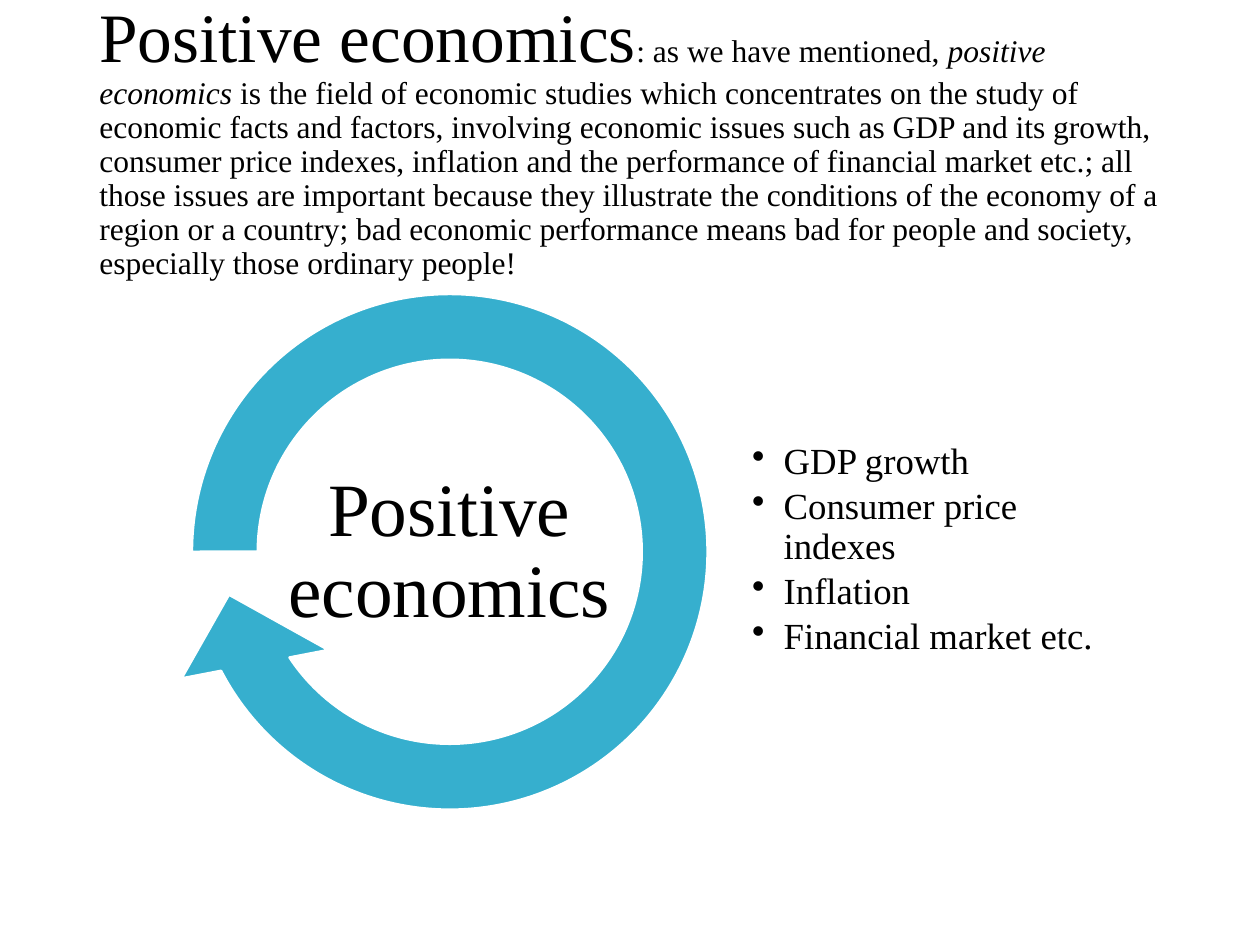
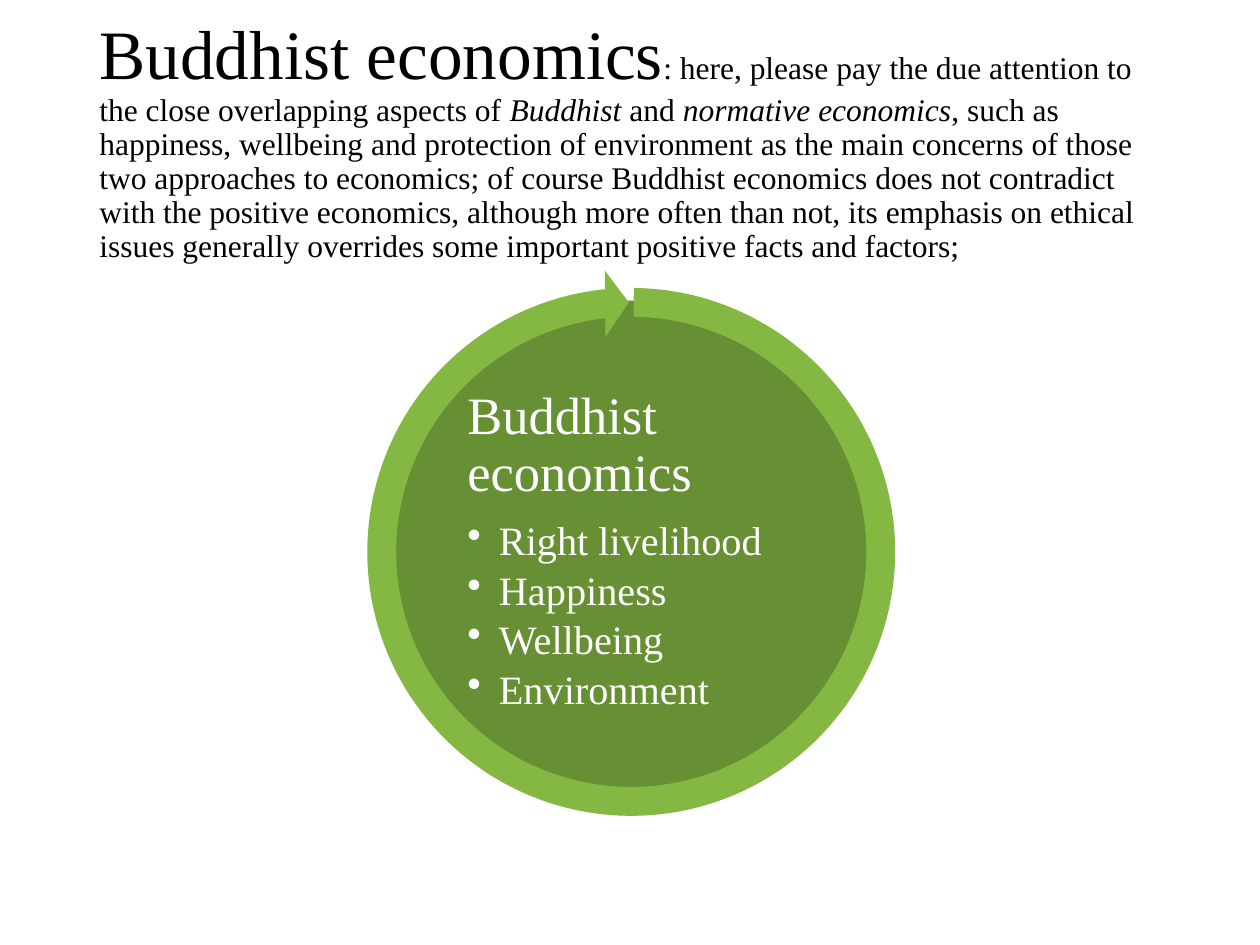
from lxml import etree
from pptx import Presentation
from pptx import util as u
from pptx.dml.color import RGBColor
from pptx.enum import shapes, text
from pptx.oxml.ns import qn

WIDTH, HEIGHT = u.Inches(10), u.Inches(7.5)
FONT = "Times New Roman"
BLACK, WHITE = "000000", "FFFFFF"
BLUE, LIME, GREEN = "36AFCE", "85B842", "678F33"
TITLE_AREA = (0.069, 0.053, 0.862, 0.194)
HEAD_SIZE, BODY_SIZE = 39.6, 18
LINE_SPACING = 0.9
INDENT = u.Inches(0.25)


def colour(value):
    return RGBColor.from_string(value)


def place(left, top, width, height):
    return (u.Emu(int(WIDTH * left)), u.Emu(int(HEIGHT * top)),
            u.Emu(int(WIDTH * width)), u.Emu(int(HEIGHT * height)))


def centred_square(centre_x, centre_y, side):
    tall = side * WIDTH / HEIGHT
    return centre_x - side / 2, centre_y - tall / 2, side, tall


def style(span, size, shade, italic=False):
    span.font.name = FONT
    span.font.size = u.Pt(size)
    span.font.italic = italic
    span.font.color.rgb = colour(shade)


def add_box(page, area, inset=None, anchor=text.MSO_ANCHOR.MIDDLE):
    frame = page.shapes.add_textbox(*place(*area)).text_frame
    frame.word_wrap = True
    frame.vertical_anchor = anchor
    if inset is not None:
        frame.margin_left = frame.margin_right = u.Inches(inset)
        frame.margin_top = frame.margin_bottom = u.Inches(inset)
    return frame


def next_paragraph(frame):
    first = frame.paragraphs[0]
    para = frame.add_paragraph() if first.runs else first
    para.line_spacing = LINE_SPACING
    return para


def space_after(para, percent):
    spacing = para._p.get_or_add_pPr().get_or_add_spcAft()
    etree.SubElement(spacing, qn("a:spcPct"), val=str(percent * 1000))


def add_heading(frame, words, size, shade, align=text.PP_ALIGN.LEFT):
    para = next_paragraph(frame)
    para.alignment = align
    space_after(para, 35)
    span = para.add_run()
    span.text = words
    style(span, size, shade)


def add_bullets(frame, items, size, shade):
    for item in items:
        para = next_paragraph(frame)
        para.level = 1
        space_after(para, 15)
        properties = para._p.get_or_add_pPr()
        properties.set("marL", str(INDENT))
        properties.set("indent", str(-INDENT))
        etree.SubElement(properties, qn("a:buChar"), char="•")
        span = para.add_run()
        span.text = item
        style(span, size, shade)


def add_title(page, head, *parts):
    para = next_paragraph(add_box(page, TITLE_AREA))
    span = para.add_run()
    span.text = head
    style(span, HEAD_SIZE, BLACK)
    for index, part in enumerate(parts):
        span = para.add_run()
        span.text = part
        style(span, BODY_SIZE, BLACK, italic=index % 2 == 1)


def add_round(page, kind, area, fill, outline=None, adjustments=()):
    shape = page.shapes.add_shape(kind, *place(*area))
    shape.shadow.inherit = False
    shape.fill.solid()
    shape.fill.fore_color.rgb = colour(fill)
    if outline:
        shape.line.color.rgb = colour(WHITE)
        shape.line.width = u.Pt(outline)
    else:
        shape.line.fill.background()
    for index, value in enumerate(adjustments):
        shape.adjustments[index] = value


def add_positive_page(page):
    add_title(
        page, "Positive economics", ": as we have mentioned, ",
        "positive economics",
        " is the field of economic studies which concentrates on the study of "
        "economic facts and factors, involving economic issues such as GDP and "
        "its growth, consumer price indexes, inflation and the performance of "
        "financial market etc.; all those issues are important because they "
        "illustrate the conditions of the economy of a region or a country; bad "
        "economic performance means bad for people and society, especially those "
        "ordinary people!")
    add_round(page, shapes.MSO_SHAPE.CIRCULAR_ARROW,
              centred_square(0.357, 0.584, 0.476), BLUE, 1.5,
              (0.11, 11.423, 90, 108, 0.125))
    issues = add_box(page, (0.595, 0.456, 0.286, 0.253), 0.02)
    add_bullets(issues, ("GDP growth", "Consumer price indexes", "Inflation",
                         "Financial market etc."), 21, BLACK)
    label = add_box(page, (0.224, 0.496, 0.265, 0.177), 0.03)
    add_heading(label, "Positive economics", 43, BLACK, text.PP_ALIGN.CENTER)


def add_buddhist_page(page):
    add_title(
        page, "Buddhist economics",
        ": here, please pay the due attention to the close overlapping aspects of ",
        "Buddhist", " and ", "normative economics",
        ", such as happiness, wellbeing and protection of environment as the main "
        "concerns of those two approaches to economics; of course Buddhist "
        "economics does not contradict with the positive economics, although more "
        "often than not, its emphasis on ethical issues generally overrides some "
        "important positive facts and factors;")
    centre = (0.5, 0.584)
    add_round(page, shapes.MSO_SHAPE.OVAL, centred_square(*centre, 0.4), GREEN, 1)
    concerns = add_box(page, centred_square(*centre, 0.266), 0.04,
                       text.MSO_ANCHOR.TOP)
    add_heading(concerns, "Buddhist economics", 30, WHITE)
    add_bullets(concerns, ("Right livelihood", "Happiness", "Wellbeing",
                           "Environment"), 23, WHITE)
    add_round(page, shapes.MSO_SHAPE.CIRCULAR_ARROW,
              centred_square(0.501, 0.584, 0.449), LIME,
              adjustments=(0.051, 3.275, 158.386, 162.339, 0.059))


def main():
    deck = Presentation()
    deck.slide_width, deck.slide_height = WIDTH, HEIGHT
    for build in (add_positive_page, add_buddhist_page):
        build(deck.slides.add_slide(deck.slide_layouts[6]))
    deck.save("out.pptx")


if __name__ == "__main__":
    main()
